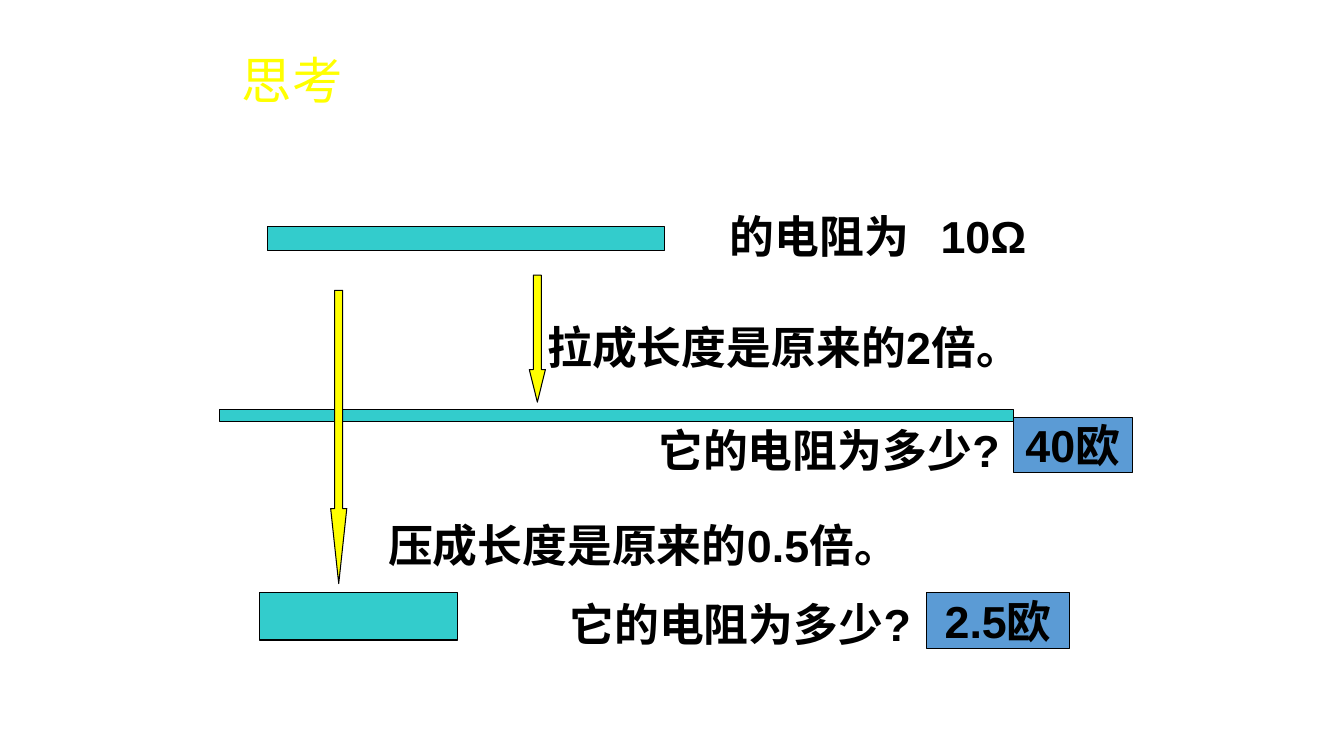
import pptx
import pptx.util
import pptx.dml.color
import pptx.enum.shapes
import pptx.enum.text
import pptx.oxml
import pptx.oxml.ns
from lxml import etree

Inches = pptx.util.Inches
Pt = pptx.util.Pt
Kind = pptx.enum.shapes.MSO_SHAPE
Align = pptx.enum.text.PP_ALIGN
Anchor = pptx.enum.text.MSO_ANCHOR
Fit = pptx.enum.text.MSO_AUTO_SIZE
qn = pptx.oxml.ns.qn


def tint(code):
    return pptx.dml.color.RGBColor.from_string(code)


def write(frame, text, size=32, face="Arial", color="000000", bold=True,
          align=Align.LEFT, tab=None, edge=None):
    para = frame.paragraphs[0]
    para.alignment = align
    if tab:
        stops = etree.SubElement(para._p.get_or_add_pPr(), qn("a:tabLst"))
        etree.SubElement(stops, qn("a:tab"), pos=str(Inches(tab)), algn="l")
    run = para.add_run()
    run.text = text
    font = run.font
    font.size = Pt(size)
    font.bold = bold
    font.color.rgb = tint(color)
    font.name = face
    props = run._r.get_or_add_rPr()
    etree.SubElement(props, qn("a:ea"), typeface="Noto Sans CJK JP")
    if edge:
        line = etree.Element(qn("a:ln"), w=str(Pt(edge)))
        fill = etree.SubElement(line, qn("a:solidFill"))
        etree.SubElement(fill, qn("a:srgbClr"), val=color)
        props.insert(0, line)


class Board:
    wire = "33CCCC"
    arrow = "FFFF00"
    answer = "5B9BD5"
    ink = "000000"

    def __init__(self, slide):
        self.shapes = slide.shapes

    def shape(self, kind, fill, box):
        item = self.shapes.add_shape(kind, *map(Inches, box))
        item.shadow.inherit = False
        item.fill.solid()
        item.fill.fore_color.rgb = tint(fill)
        item.line.color.rgb = tint(self.ink)
        item.line.width = Pt(0.75)
        return item

    def bar(self, *box):
        self.shape(Kind.RECTANGLE, self.wire, box)

    def down(self, left, top, height, head):
        item = self.shape(Kind.DOWN_ARROW, self.arrow, (left, top, 0.16, height))
        item.adjustments[0] = 0.5
        item.adjustments[1] = head

    def result(self, text, *box):
        frame = self.shape(Kind.RECTANGLE, self.answer, box).text_frame
        frame.word_wrap = False
        frame.vertical_anchor = Anchor.MIDDLE
        write(frame, text, align=Align.CENTER)

    def label(self, text, *box, wrap=True, grow=True, **style):
        frame = self.shapes.add_textbox(*map(Inches, box)).text_frame
        frame.word_wrap = wrap
        frame.auto_size = Fit.SHAPE_TO_FIT_TEXT if grow else Fit.NONE
        write(frame, text, **style)


def main():
    deck = pptx.Presentation()
    deck.slide_width = Inches(13.33)
    deck.slide_height = Inches(7.5)
    board = Board(deck.slides.add_slide(deck.slide_layouts[6]))

    board.bar(2.65, 2.25, 3.94, 0.24)
    board.label("思考", 2.18, 0.44, 1.44, 1.2, wrap=False, grow=False, size=36,
                face="Noto Sans CJK JP", color="FFFF00", bold=False,
                align=Align.CENTER, edge=0.75)
    board.label("的电阻为\t10Ω", 7.14, 2.02, 3.47, 0.63, tab=2.09)
    board.bar(2.18, 4.06, 7.87, 0.12)
    board.bar(2.57, 5.88, 1.97, 0.47)
    for left, top in ((6.43, 4.14), (5.55, 5.87)):
        board.label("它的电阻为多少?", left, top, 3.6, 0.63, wrap=False)
    board.down(5.25, 2.73, 1.26, 2.02)
    board.down(3.28, 2.88, 2.91, 4.66)
    board.label("拉成长度是原来的2倍。", 5.33, 3.12, 5.28, 0.63)
    board.label("压成长度是原来的0.5倍。", 3.75, 5.09, 5.35, 0.63)
    board.result("40欧", 10.05, 4.14, 1.18, 0.55)
    board.result("2.5欧", 9.19, 5.88, 1.42, 0.55)

    deck.save("out.pptx")


if __name__ == "__main__":
    main()
